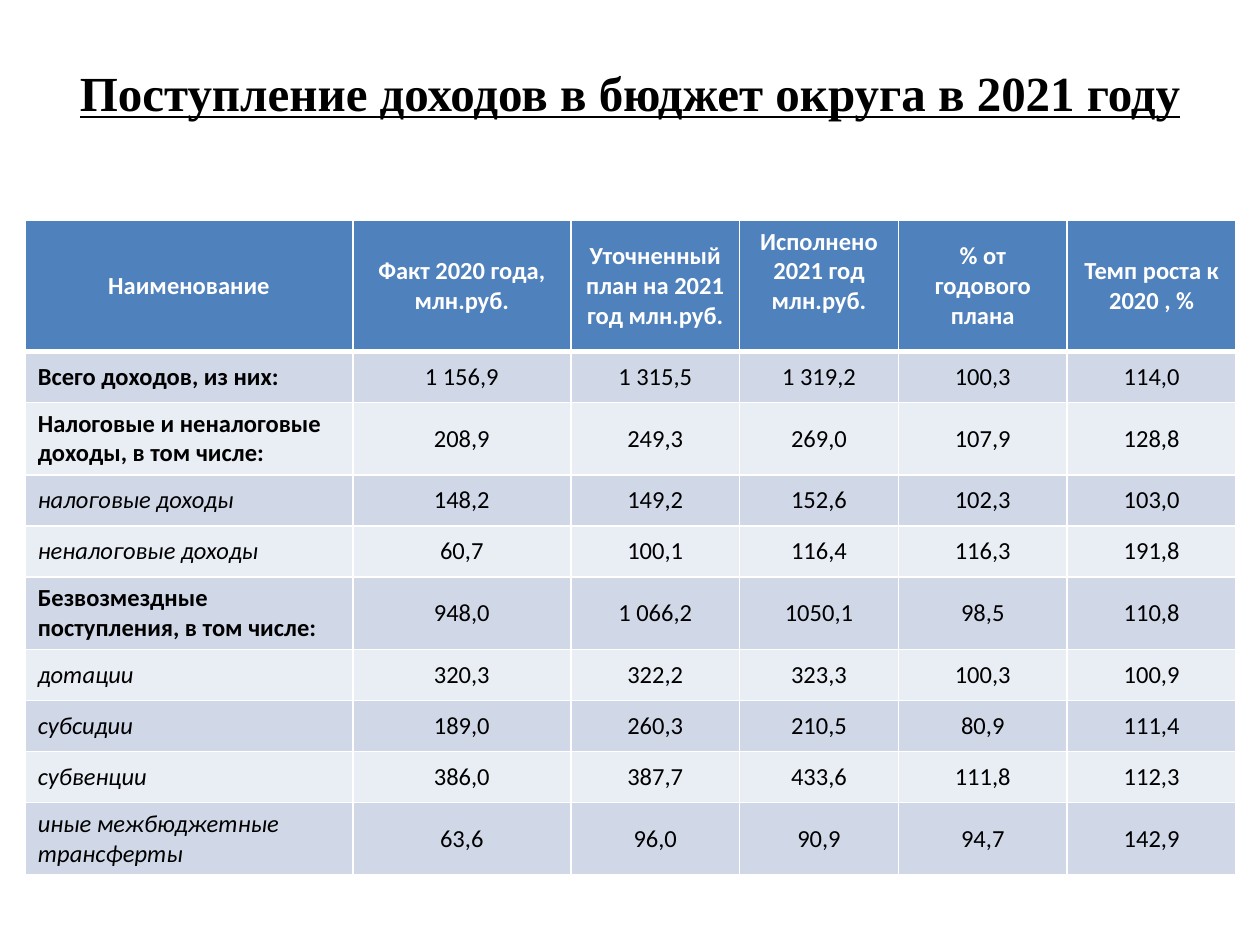
from dataclasses import dataclass

import pptx
import pptx.dml.color
import pptx.enum.text
import pptx.oxml
import pptx.oxml.ns
import pptx.util

Pt = pptx.util.Pt
ALIGN = pptx.enum.text.PP_ALIGN
MIDDLE = pptx.enum.text.MSO_ANCHOR.MIDDLE

COLORS = {
    "header": "4F81BD",
    "odd": "D0D8E8",
    "even": "E9EDF4",
    "border": "FFFFFF",
    "header_text": "FFFFFF",
    "text": "000000",
}
COLUMN_WIDTHS = [187.2, 124.6, 96.5, 90.7, 96.5, 96.5]
HEADER_HEIGHT = 74.5
LINE_HEIGHT = 17.1
ROW_HEIGHTS = {1: 29.2, 2: 41.4}
HEADERS = [
    "Наименование",
    "Факт 2020 года, млн.руб.",
    "Уточненный план на 2021 год млн.руб.",
    "Исполнено 2021 год млн.руб.",
    "% от годового плана",
    "Темп роста к 2020 , %",
]
EXECUTED_COLUMN = 3


@dataclass
class IncomeRow:
    name: str
    values: list[str]
    total: bool = False
    lines: int = 1


ROWS = [
    IncomeRow("Всего доходов, из них:",
              ["1 156,9", "1 315,5", "1 319,2", "100,3", "114,0"], total=True),
    IncomeRow("Налоговые и неналоговые доходы, в том числе:",
              ["208,9", "249,3", "269,0", "107,9", "128,8"], total=True, lines=2),
    IncomeRow("налоговые доходы", ["148,2", "149,2", "152,6", "102,3", "103,0"]),
    IncomeRow("неналоговые доходы", ["60,7", "100,1", "116,4", "116,3", "191,8"]),
    IncomeRow("Безвозмездные поступления, в том числе:",
              ["948,0", "1 066,2", "1050,1", "98,5", "110,8"], total=True, lines=2),
    IncomeRow("дотации", ["320,3", "322,2", "323,3", "100,3", "100,9"]),
    IncomeRow("субсидии", ["189,0", "260,3", "210,5", "80,9", "111,4"]),
    IncomeRow("субвенции", ["386,0", "387,7", "433,6", "111,8", "112,3"]),
    IncomeRow("иные межбюджетные трансферты",
              ["63,6", "96,0", "90,9", "94,7", "142,9"], lines=2),
]


def rgb(name: str) -> pptx.dml.color.RGBColor:
    return pptx.dml.color.RGBColor.from_string(COLORS[name])


def set_borders(cell, top: float = 1, bottom: float = 1) -> None:
    tc_pr = cell._tc.get_or_add_tcPr()
    for side, width in (("L", 1), ("R", 1), ("T", top), ("B", bottom)):
        tc_pr.append(pptx.oxml.parse_xml(
            f'<a:ln{side} {pptx.oxml.ns.nsdecls("a")} w="{Pt(width)}"><a:solidFill>'
            f'<a:srgbClr val="{COLORS["border"]}"/></a:solidFill></a:ln{side}>'))


def write_cell(cell, text: str, fill: str, color: str = "text", bold: bool = False,
               italic: bool = False, align=ALIGN.CENTER) -> None:
    cell.fill.solid()
    cell.fill.fore_color.rgb = rgb(fill)
    cell.vertical_anchor = MIDDLE
    p = cell.text_frame.paragraphs[0]
    p.text = text
    p.alignment = align
    p.font.name = "Calibri"
    p.font.size = Pt(14)
    p.font.bold = bold
    p.font.italic = italic
    p.font.color.rgb = rgb(color)


def add_title(slide, text: str) -> None:
    sp = slide.shapes.add_textbox(Pt(36), Pt(15), Pt(648), Pt(75))
    tf = sp.text_frame
    tf.word_wrap = True
    tf.vertical_anchor = MIDDLE
    p = tf.paragraphs[0]
    p.text = text
    p.alignment = ALIGN.CENTER
    p.font.name = "Times New Roman"
    p.font.size = Pt(28)
    p.font.bold = True
    p.font.underline = True
    p.font.color.rgb = rgb("text")


def add_income_table(slide) -> None:
    heights = [HEADER_HEIGHT] + [ROW_HEIGHTS[row.lines] for row in ROWS]
    table = slide.shapes.add_table(
        len(heights), len(HEADERS), Pt(14.4), Pt(126),
        Pt(sum(COLUMN_WIDTHS)), Pt(sum(heights))).table
    for column, width in zip(table.columns, COLUMN_WIDTHS):
        column.width = Pt(width)
    for table_row, height in zip(table.rows, heights):
        table_row.height = Pt(height)

    for c, header in enumerate(HEADERS):
        cell = table.cell(0, c)
        set_borders(cell, bottom=3)
        write_cell(cell, header, "header", "header_text", bold=True)
    # This heading sits one line higher than its neighbours.
    table.cell(0, EXECUTED_COLUMN).margin_bottom = Pt(3.6 + LINE_HEIGHT)

    for r, row in enumerate(ROWS, start=1):
        fill = "odd" if r % 2 else "even"
        for c, text in enumerate([row.name, *row.values]):
            cell = table.cell(r, c)
            set_borders(cell, top=3 if r == 1 else 1)
            if c == 0:
                write_cell(cell, text, fill, bold=row.total,
                           italic=not row.total, align=ALIGN.LEFT)
            else:
                write_cell(cell, text, fill)


def main() -> None:
    prs = pptx.Presentation()
    prs.slide_width, prs.slide_height = Pt(720), Pt(540)
    slide = prs.slides.add_slide(prs.slide_layouts[6])
    add_title(slide, "Поступление доходов в бюджет округа в 2021 году")
    add_income_table(slide)
    prs.save("out.pptx")


if __name__ == "__main__":
    main()
